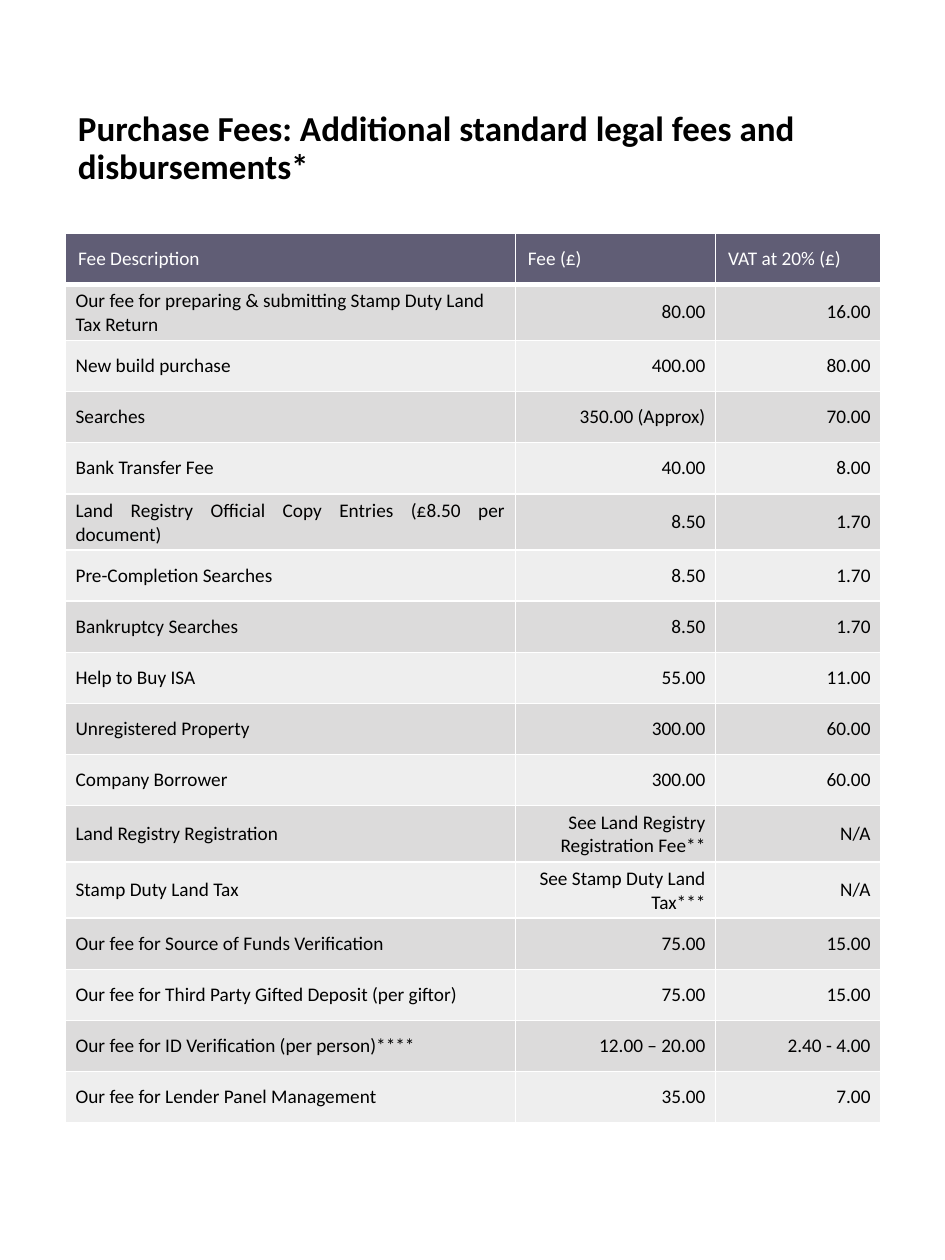
from typing import NamedTuple

from lxml.etree import SubElement
from pptx import Presentation
from pptx.dml.color import RGBColor
from pptx.enum.text import MSO_ANCHOR, PP_ALIGN
from pptx.oxml.ns import qn
from pptx.util import Inches, Pt

COLORS = {
    "black": "000000",
    "white": "FFFFFF",
    "header": "605D75",
    "odd": "DCDBDB",
    "even": "EEEEEE",
}
FONT = "Calibri"
LEFT, WIDTH = Inches(0.52), Inches(6.47)
COLUMN_WIDTHS = (3.57, 1.59, 1.31)
TABLE_HEIGHT = Inches(6.9)


class Fee(NamedTuple):
    description: str
    amount: str
    vat: str


class CellStyle(NamedTuple):
    fill: str
    text: str
    margin_x: float
    margin_y: float
    top_line: float = 1
    bottom_line: float = 1


HEADINGS = Fee("Fee Description", "Fee (£)", "VAT at 20% (£)")
JUSTIFIED = "Land Registry Official Copy Entries (£8.50 per document)"
FEES = [
    Fee("Our fee for preparing & submitting Stamp Duty Land Tax Return", "80.00", "16.00"),
    Fee("New build purchase", "400.00", "80.00"),
    Fee("Searches", "350.00 (Approx)", "70.00"),
    Fee("Bank Transfer Fee", "40.00", "8.00"),
    Fee(JUSTIFIED, "8.50", "1.70"),
    Fee("Pre-Completion Searches", "8.50", "1.70"),
    Fee("Bankruptcy Searches", "8.50", "1.70"),
    Fee("Help to Buy ISA", "55.00", "11.00"),
    Fee("Unregistered Property", "300.00", "60.00"),
    Fee("Company Borrower", "300.00", "60.00"),
    Fee("Land Registry Registration", "See Land Registry Registration Fee**", "N/A"),
    Fee("Stamp Duty Land Tax", "See Stamp Duty Land Tax***", "N/A"),
    Fee("Our fee for Source of Funds Verification", "75.00", "15.00"),
    Fee("Our fee for Third Party Gifted Deposit (per giftor)", "75.00", "15.00"),
    Fee("Our fee for ID Verification (per person)****", "12.00 – 20.00", "2.40 - 4.00"),
    Fee("Our fee for Lender Panel Management", "35.00", "7.00"),
]


def add_span(para, text: str, size: float, color: str, bold: bool = False) -> None:
    span = para.add_run()
    span.text = text
    span.font.name = FONT
    span.font.size = Pt(size)
    span.font.bold = bold
    span.font.color.rgb = RGBColor.from_string(COLORS[color])


def add_title(page, text: str) -> None:
    box = page.shapes.add_textbox(LEFT, Inches(0.53), WIDTH, Inches(1.31))
    frame = box.text_frame
    frame.word_wrap = True
    frame.vertical_anchor = MSO_ANCHOR.MIDDLE
    para = frame.paragraphs[0]
    para.line_spacing = 0.9
    add_span(para, text, 20, "black", bold=True)


def add_borders(cell, style: CellStyle) -> None:
    properties = cell._tc.get_or_add_tcPr()
    widths = {"lnL": 1, "lnR": 1, "lnT": style.top_line, "lnB": style.bottom_line}
    for side, width in widths.items():
        line = SubElement(properties, qn(f"a:{side}"), w=str(Pt(width)))
        fill = SubElement(line, qn("a:solidFill"))
        SubElement(fill, qn("a:srgbClr"), val=COLORS["white"])


def fill_cell(cell, text: str, style: CellStyle, alignment: PP_ALIGN) -> None:
    add_borders(cell, style)
    cell.fill.solid()
    cell.fill.fore_color.rgb = RGBColor.from_string(COLORS[style.fill])
    cell.vertical_anchor = MSO_ANCHOR.MIDDLE
    cell.margin_left = cell.margin_right = Inches(style.margin_x)
    cell.margin_top = cell.margin_bottom = Inches(style.margin_y)
    para = cell.text_frame.paragraphs[0]
    para.alignment = alignment
    add_span(para, text, 11, style.text)


def body_alignment(column: int, text: str) -> PP_ALIGN:
    if column > 0:
        return PP_ALIGN.RIGHT
    return PP_ALIGN.JUSTIFY if text == JUSTIFIED else PP_ALIGN.LEFT


def add_fee_table(page) -> None:
    row_count = len(FEES) + 1
    table = page.shapes.add_table(
        row_count, len(COLUMN_WIDTHS), LEFT, Inches(1.85), WIDTH, TABLE_HEIGHT
    ).table
    table.first_row = True
    table.horz_banding = False
    for column, width in zip(table.columns, COLUMN_WIDTHS):
        column.width = Inches(width)
    for row in table.rows:
        row.height = TABLE_HEIGHT // row_count

    # Heading row
    heading_style = CellStyle("header", "white", 0.1, 0.07, bottom_line=3)
    for column, text in enumerate(HEADINGS):
        fill_cell(table.cell(0, column), text, heading_style, PP_ALIGN.LEFT)

    # Fee rows in alternating shades
    for number, fee in enumerate(FEES, start=1):
        shade = "odd" if number % 2 else "even"
        style = CellStyle(shade, "black", 0.08, 0.04, top_line=3 if number == 1 else 1)
        for column, text in enumerate(fee):
            fill_cell(table.cell(number, column), text, style, body_alignment(column, text))


def main() -> None:
    deck = Presentation()
    deck.slide_width, deck.slide_height = Inches(7.5), Inches(10)
    page = deck.slides.add_slide(deck.slide_layouts[6])
    add_title(page, "Purchase Fees: Additional standard legal fees and disbursements*")
    add_fee_table(page)
    deck.save("out.pptx")


if __name__ == "__main__":
    main()
